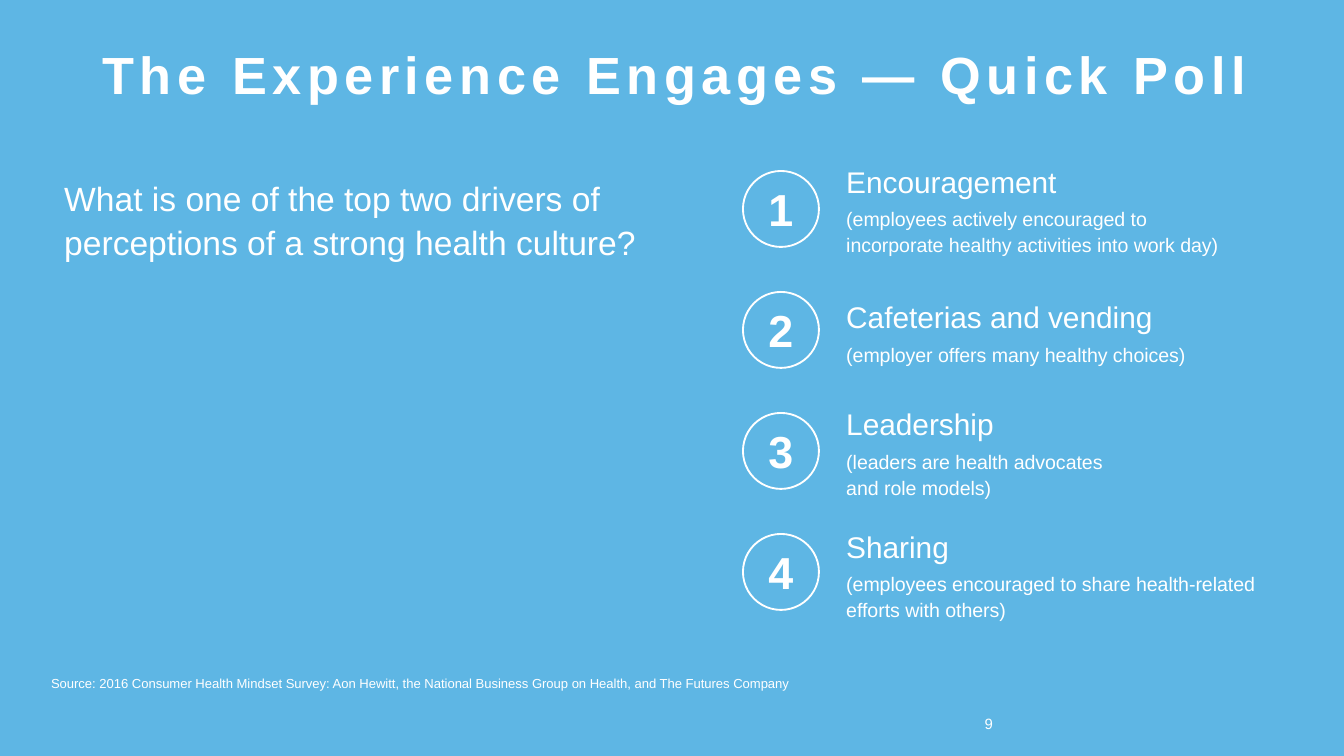
import pptx
import pptx.dml.color
import pptx.enum.shapes
import pptx.enum.text
import pptx.util

SCALE = 914400 / 134.4  # EMU per px
SKY = pptx.dml.color.RGBColor(0x5E, 0xB6, 0xE4)
WHITE = pptx.dml.color.RGBColor(0xFF, 0xFF, 0xFF)
ALIGN = pptx.enum.text.PP_ALIGN
ANCHOR = pptx.enum.text.MSO_ANCHOR

# heading, explanation, box top, box width, box height
OPTIONS = [
    ("Encouragement",
     "(employees actively encouraged to incorporate healthy activities into work day)",
     153, 411, 112),
    ("Cafeterias and vending", "(employer offers many healthy choices)",
     289, 384, 85),
    ("Leadership", "(leaders are health advocates and role models)",
     396, 302, 112),
    ("Sharing", "(employees encouraged to share health-related efforts with others)",
     518, 464, 112),
]
FIRST_CIRCLE_TOP = 171
CIRCLE_PITCH = 121


def px(*lengths):
    return [pptx.util.Emu(round(length * SCALE)) for length in lengths]


class PollSlide:
    font = "Arial"

    def __init__(self, slide):
        self.slide = slide
        slide.background.fill.solid()
        slide.background.fill.fore_color.rgb = SKY

    def style(self, paragraph, size, bold=False, align=ALIGN.LEFT,
              line_spacing=None, after=0):
        paragraph.alignment = align
        paragraph.line_spacing = line_spacing
        paragraph.space_after = pptx.util.Pt(after)
        font = paragraph.font
        font.name, font.size, font.bold = self.font, pptx.util.Pt(size), bold
        font.color.rgb = WHITE

    def inset(self, frame, margin):
        frame.margin_left, frame.margin_top, frame.margin_right, frame.margin_bottom = px(*[margin] * 4)

    def box(self, left, top, width, height, margin=None, anchor=ANCHOR.TOP):
        frame = self.slide.shapes.add_textbox(*px(left, top, width, height)).text_frame
        frame.word_wrap = True
        frame.vertical_anchor = anchor
        if margin is not None:
            self.inset(frame, margin)
        return frame

    def text(self, words, bounds, size, margin=None, anchor=ANCHOR.TOP, **style):
        paragraph = self.box(*bounds, margin, anchor).paragraphs[0]
        paragraph.text = words
        self.style(paragraph, size, **style)
        return paragraph

    def title(self, words, bounds):
        paragraph = self.text(words, bounds, 28, bold=True,
                              align=ALIGN.CENTER, line_spacing=0.9)
        # Letter spacing in hundredths of a point
        paragraph.runs[0]._r.get_or_add_rPr().set("spc", "300")

    def option(self, heading, explanation, top, width, height):
        frame = self.box(833, top, width, height)
        frame.text = f"{heading}\n{explanation}"
        for paragraph, size, after in zip(frame.paragraphs, (16, 10.5), (3, 6)):
            self.style(paragraph, size, line_spacing=1.1, after=after)

    def numbered_circle(self, number, top):
        circle = self.slide.shapes.add_shape(
            pptx.enum.shapes.MSO_SHAPE.OVAL, *px(743, top, 76, 76))
        circle.shadow.inherit = False
        circle.fill.background()
        circle.line.color.rgb = WHITE
        circle.line.width = pptx.util.Pt(1)
        frame = circle.text_frame
        frame.vertical_anchor = ANCHOR.MIDDLE
        self.inset(frame, 7)
        frame.text = str(number)
        self.style(frame.paragraphs[0], 24, bold=True, align=ALIGN.CENTER)


def main():
    deck = pptx.Presentation()
    deck.slide_width, deck.slide_height = px(1344, 756)
    poll = PollSlide(deck.slides.add_slide(deck.slide_layouts[6]))

    poll.text("9", (941, 715, 52, 17), 8, margin=0, anchor=ANCHOR.BOTTOM,
              align=ALIGN.RIGHT)
    poll.text("Source: 2016 Consumer Health Mindset Survey: Aon Hewitt, the National "
              "Business Group on Health, and The Futures Company",
              (51, 675, 820, 26), 7, margin=0)
    poll.title("The Experience Engages — Quick Poll", (54, 43, 1242, 63))
    poll.text("What is one of the top two drivers of perceptions of a strong health culture?",
              (51, 167, 598, 103), 18, line_spacing=1.1, after=12)
    for index, option in enumerate(OPTIONS):
        poll.option(*option)
        poll.numbered_circle(index + 1, FIRST_CIRCLE_TOP + index * CIRCLE_PITCH)

    deck.save("out.pptx")


if __name__ == "__main__":
    main()
